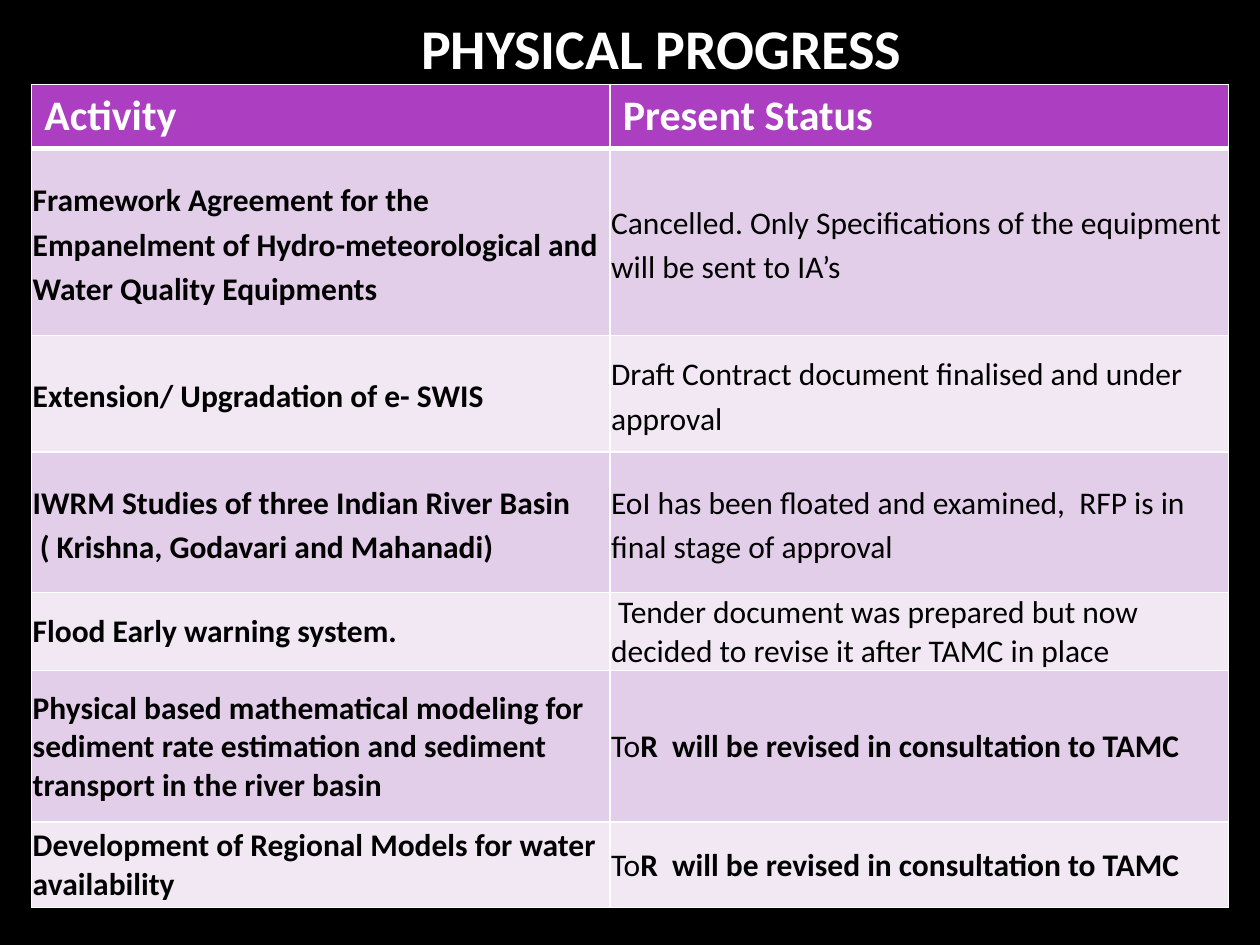
from lxml.etree import SubElement
from pptx import Presentation
from pptx.dml.color import RGBColor as RGB
from pptx.enum.text import MSO_ANCHOR as ANCHOR, PP_ALIGN as ALIGN
from pptx.oxml.ns import qn
from pptx.util import Cm, Pt

THEME = {
    "font": "Calibri",
    "back": RGB(0, 0, 0),
    "light": RGB(255, 255, 255),
    "dark": RGB(0, 0, 0),
    "header": RGB(0xAC, 0x3E, 0xC1),
    "bands": [RGB(0xE3, 0xCE, 0xE9), RGB(0xF1, 0xE8, 0xF4)],
    "title_size": Pt(32),
    "header_size": Pt(24),
    "body_size": Pt(18),
}
TITLE_FONT = {"name": THEME["font"], "size": THEME["title_size"], "bold": True}
HEADER_FONT = {"name": THEME["font"], "size": THEME["header_size"], "bold": True}
BODY_FONT = {"name": THEME["font"], "size": THEME["body_size"]}
BODY_CELL = {"vertical_anchor": ANCHOR.MIDDLE, "margin_left": Cm(0.02),
             "margin_right": Cm(0.02), "margin_top": Cm(0.02), "margin_bottom": 0}

COLUMNS = [("Activity", 11.66), ("Present Status", 12.47)]
HEADER_HEIGHT = 1.27
# height in cm, line spacing, activity paragraphs, status as (plain, bold) text
ROWS = [
    (3.78, 1.15, ["Framework Agreement for the Empanelment of Hydro-meteorological and  "
                  "Water Quality Equipments"],
     ("Cancelled. Only Specifications of the equipment will be sent to IA’s", "")),
    (2.34, 1.15, ["Extension/ Upgradation of e- SWIS"],
     ("Draft Contract document finalised and under approval", "")),
    (2.84, 1.15, ["IWRM Studies of three Indian River Basin",
                  " ( Krishna, Godavari and Mahanadi)"],
     ("EoI has been floated and examined,  RFP is in final stage of approval", "")),
    (1.55, 1, ["Flood Early warning system."],
     (" Tender document was prepared but now decided to revise it after TAMC in place", "")),
    (3.05, 1, ["Physical based mathematical modeling for sediment rate estimation "
               "and sediment transport in the river basin"],
     ("To", "R  will be revised in consultation to TAMC")),
    (1.73, 1, ["Development of Regional Models for water availability"],
     ("To", "R  will be revised in consultation to TAMC")),
]


def add_run(p, text, color, font):
    r = p.add_run()
    r.text = text
    r.font.color.rgb = color
    for name, value in font.items():
        setattr(r.font, name, value)


def paint_cell(cell, fill, top=1, bottom=1):
    """Give a cell its border lines (widths in points), then its fill."""
    tc_pr = cell._tc.get_or_add_tcPr()
    for side, width in (("L", 1), ("R", 1), ("T", top), ("B", bottom)):
        ln = SubElement(tc_pr, qn(f"a:ln{side}"), w=str(Pt(width)))
        solid = SubElement(ln, qn("a:solidFill"))
        SubElement(solid, qn("a:srgbClr"), val=str(THEME["light"]))
    cell.fill.solid()
    cell.fill.fore_color.rgb = fill


prs = Presentation()
prs.slide_width, prs.slide_height = Cm(25.4), Cm(19.05)
s = prs.slides.add_slide(prs.slide_layouts[5])
s.background.fill.solid()
s.background.fill.fore_color.rgb = THEME["back"]

title = s.shapes.title
title.left, title.top, title.width, title.height = Cm(2.54), Cm(0), Cm(21.59), Cm(1.9)
title.text_frame.vertical_anchor = ANCHOR.MIDDLE
p = title.text_frame.paragraphs[0]
p.alignment = ALIGN.CENTER
add_run(p, "PHYSICAL PROGRESS", THEME["light"], TITLE_FONT)

heights = [HEADER_HEIGHT] + [row[0] for row in ROWS]
table = s.shapes.add_table(len(heights), len(COLUMNS), Cm(0.64), Cm(1.7),
                           Cm(sum(width for _, width in COLUMNS)), Cm(sum(heights))).table
for row, height in zip(table.rows, heights):
    row.height = Cm(height)

for i, (heading, width) in enumerate(COLUMNS):
    table.columns[i].width = Cm(width)
    cell = table.cell(0, i)
    paint_cell(cell, THEME["header"], bottom=3)
    add_run(cell.text_frame.paragraphs[0], heading, THEME["light"], HEADER_FONT)

for i, (_, spacing, activity, status) in enumerate(ROWS):
    contents = [[[(line, True)] for line in activity],
                [[(status[0], False), (status[1], True)]]]
    for j, paragraphs in enumerate(contents):
        cell = table.cell(i + 1, j)
        paint_cell(cell, THEME["bands"][i % 2], top=1 if i else 3)
        for name, value in BODY_CELL.items():
            setattr(cell, name, value)
        tf = cell.text_frame
        for k, runs in enumerate(paragraphs):
            p = tf.add_paragraph() if k else tf.paragraphs[0]
            p.line_spacing = float(spacing)
            for text, bold in runs:
                if text:
                    add_run(p, text, THEME["dark"], {**BODY_FONT, "bold": bold})

prs.save("out.pptx")
